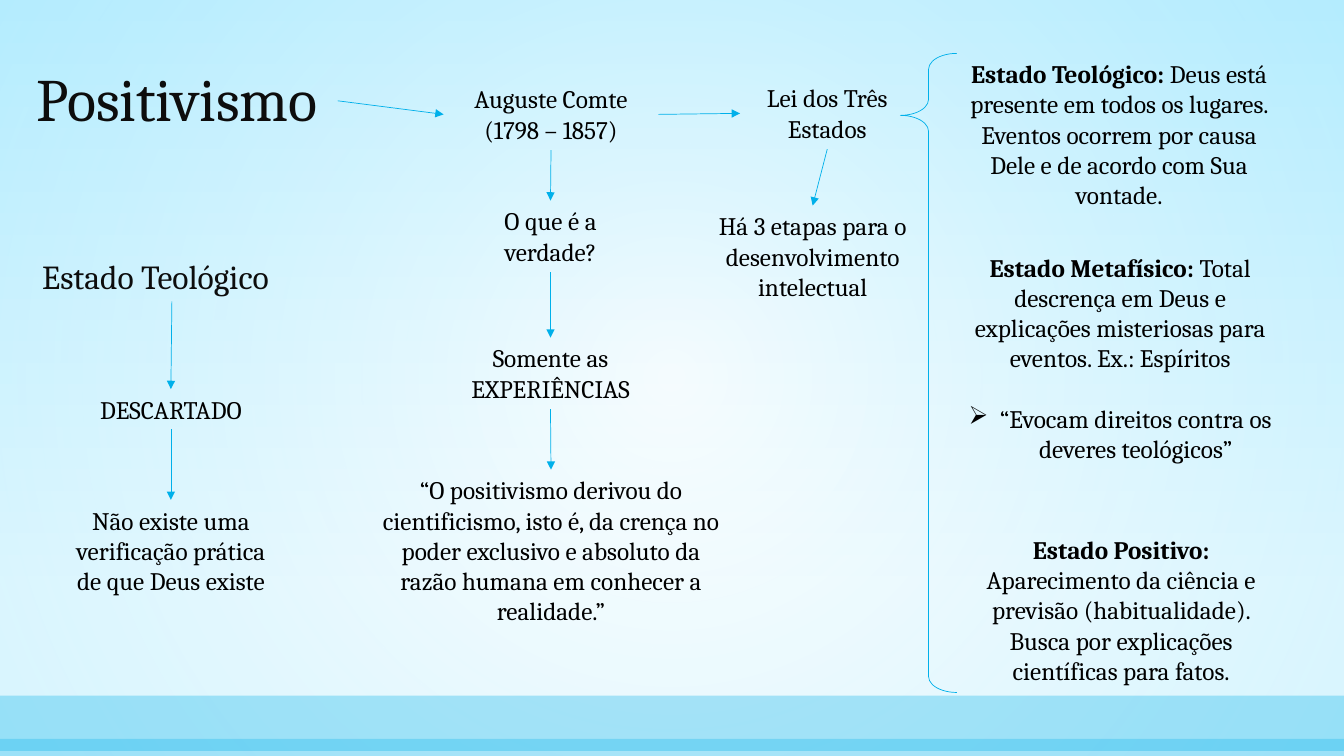
from lxml import etree
from pptx import Presentation
from pptx import util as u
from pptx.dml.color import RGBColor
from pptx.enum import shapes, text
from pptx.oxml import parse_xml
from pptx.oxml.ns import nsdecls, qn

TOP, LEFT, BOTTOM, RIGHT = range(4)


def color(hex_code):
    return RGBColor.from_string(hex_code)


def gradient(stops, direction):
    """Gradient fill element from (position %, colour, opacity %) stops."""
    stop_xml = "".join(
        f'<a:gs pos="{pos * 1000}"><a:srgbClr val="{hex_code}">'
        f'<a:alpha val="{opacity * 1000}"/></a:srgbClr></a:gs>'
        for pos, hex_code, opacity in stops)
    return parse_xml(f'<a:gradFill {nsdecls("a")} rotWithShape="1">'
                     f'<a:gsLst>{stop_xml}</a:gsLst>{direction}</a:gradFill>')


class ConceptMap:
    font = "Cambria"
    ink, title_ink, accent = "000000", "0D0D0D", "00B0EA"
    line_width = u.Pt(0.5)

    def __init__(self, slide):
        self.slide = slide

    def background(self, stops, direction):
        self.slide.background.fill.solid()
        solid = self.slide.element.xpath(".//p:bgPr/a:solidFill")[0]
        solid.getparent().replace(solid, gradient(stops, direction))

    def shape(self, kind, x, y, w, h):
        item = self.slide.shapes.add_shape(
            kind, u.Inches(x), u.Inches(y), u.Inches(w), u.Inches(h))
        item.shadow.inherit = False
        return item

    def panel(self, x, y, w, h):
        area = self.shape(shapes.MSO_SHAPE.RECTANGLE, x, y, w, h)
        area.line.fill.background()
        area.fill.solid()
        area.fill.fore_color.rgb = color(self.accent)
        return area.element.spPr.find(qn("a:solidFill"))

    def glow(self, x, y, w, h, stops, direction):
        solid = self.panel(x, y, w, h)
        solid.getparent().replace(solid, gradient(stops, direction))

    def band(self, x, y, w, h, opacity):
        tint = self.panel(x, y, w, h)[0]
        etree.SubElement(tint, qn("a:alpha")).set("val", str(opacity * 1000))

    def brace(self, x, y, w, h, adjustments):
        bracket = self.shape(shapes.MSO_SHAPE.LEFT_BRACE, x, y, w, h)
        bracket.fill.background()
        bracket.line.color.rgb = color(self.accent)
        bracket.line.width = self.line_width
        for index, value in enumerate(adjustments):
            bracket.adjustments[index] = value

    def box(self, x, y, w, h):
        holder = self.slide.shapes.add_textbox(
            u.Inches(x), u.Inches(y), u.Inches(w), u.Inches(h))
        holder.text_frame.word_wrap = True
        return holder

    def add_words(self, paragraph, words, size=18, ink=ink, bold=False):
        run = paragraph.add_run()
        run.text = words
        run.font.name = self.font
        run.font.size = u.Pt(size)
        run.font.bold = bold
        run.font.color.rgb = color(ink)

    def heading(self, x, y, w, h, words, size, align):
        holder = self.box(x, y, w, h)
        holder.text_frame.vertical_anchor = text.MSO_ANCHOR.BOTTOM
        paragraph = holder.text_frame.paragraphs[0]
        paragraph.alignment = align
        paragraph.line_spacing = 0.9
        self.add_words(paragraph, words, size, self.title_ink)
        return holder

    def note(self, x, y, w, h, words, lead=None):
        holder = self.box(x, y, w, h)
        holder.text_frame.auto_size = text.MSO_AUTO_SIZE.SHAPE_TO_FIT_TEXT
        paragraph = holder.text_frame.paragraphs[0]
        paragraph.alignment = text.PP_ALIGN.CENTER
        if lead:
            self.add_words(paragraph, lead, bold=True)
        self.add_words(paragraph, words)
        return holder

    def bullet(self, holder, words, mark):
        paragraph = holder.text_frame.add_paragraph()
        paragraph.alignment = text.PP_ALIGN.CENTER
        paragraph.space_before = u.Pt(21.5)
        self.add_words(paragraph, words)
        props = paragraph._p.get_or_add_pPr()
        props.set("marL", str(u.Inches(0.31)))
        props.set("indent", str(u.Inches(-0.31)))
        etree.SubElement(props, qn("a:buChar")).set("char", mark)

    def arrow(self, target, target_side, source=None, source_side=None, start=(0, 0)):
        link = self.slide.shapes.add_connector(
            shapes.MSO_CONNECTOR.STRAIGHT, *map(u.Inches, start + start))
        if source is not None:
            link.begin_connect(source, source_side)
        link.end_connect(target, target_side)
        link.line.color.rgb = color(self.accent)
        link.line.width = self.line_width
        props = link.element.spPr
        etree.SubElement(props.find(qn("a:ln")), qn("a:tailEnd")).set("type", "triangle")
        etree.SubElement(props, qn("a:effectLst"))


def main():
    deck = Presentation()
    deck.slide_width, deck.slide_height = u.Inches(13.33), u.Inches(7.5)
    page = ConceptMap(deck.slides.add_slide(deck.slide_layouts[6]))

    # Backdrop
    page.background([(0, "C8F1FF", 56), (79, "FFFFFF", 100)],
                    '<a:lin ang="5400000" scaled="0"/>')
    page.glow(0, 0, 13.33, 7.5, [(0, "FFFFFF", 49), (100, "91E4FF", 35)],
              '<a:path path="circle"><a:fillToRect l="50000" t="50000" '
              'r="50000" b="50000"/></a:path>')
    page.band(0, 6.9, 13.33, 0.55, 30)
    page.band(0, 7.33, 13.33, 0.17, 28)

    # Title and the author's line of thought
    page.heading(0.16, 0.19, 3.19, 1.19, "Positivismo", 43, text.PP_ALIGN.CENTER)
    comte = page.note(4.4, 0.78, 2.13, 0.71, "Auguste Comte (1798 – 1857)")
    truth = page.note(4.52, 1.99, 1.88, 0.71, "O que é a verdade?")
    experience = page.note(4.25, 3.35, 2.42, 0.71, "Somente as EXPERIÊNCIAS")
    scientism = page.note(
        3.69, 4.66, 3.55, 1.62,
        "“O positivismo derivou do cientificismo, isto é, da crença no poder "
        "exclusivo e absoluto da razão humana em conhecer a realidade.”")

    # Law of the three states
    law = page.note(7.34, 0.77, 1.73, 0.71, "Lei dos Três Estados")
    stages = page.note(6.95, 2.04, 2.22, 1.01,
                       "Há 3 etapas para o desenvolvimento intelectual")
    page.brace(8.93, 0.53, 0.56, 6.34, (0.283, 0.097))
    page.note(9.47, 0.53, 3.26, 1.92,
              "Deus está presente em todos os lugares. Eventos ocorrem por causa "
              "Dele e de acordo com Sua vontade.", "Estado Teológico: ")
    metaphysical = page.note(
        9.49, 2.45, 3.24, 2.22,
        "Total descrença em Deus e explicações misteriosas para eventos. "
        "Ex.: Espíritos", "Estado Metafísico: ")
    page.bullet(metaphysical, "“Evocam direitos contra os deveres teológicos”", "➢")
    page.note(9.51, 5.25, 3.22, 1.62,
              "Aparecimento da ciência e previsão (habitualidade). Busca por "
              "explicações científicas para fatos.", "Estado Positivo: ")

    # Theological state discarded
    theological = page.heading(0.32, 2.4, 2.77, 0.59, "Estado Teológico", 24,
                               text.PP_ALIGN.LEFT)
    discarded = page.note(0.7, 3.86, 1.99, 0.4, "DESCARTADO")
    unproven = page.note(0.54, 4.96, 2.31, 1.01,
                         "Não existe uma verificação prática de que Deus existe")

    # Arrows
    page.arrow(comte, LEFT, start=(3.35, 1))
    page.arrow(law, LEFT, comte, RIGHT)
    for chain in ((comte, truth, experience, scientism), (law, stages),
                  (theological, discarded, unproven)):
        for upper, lower in zip(chain, chain[1:]):
            page.arrow(lower, TOP, upper, BOTTOM)

    deck.save("out.pptx")


if __name__ == "__main__":
    main()
